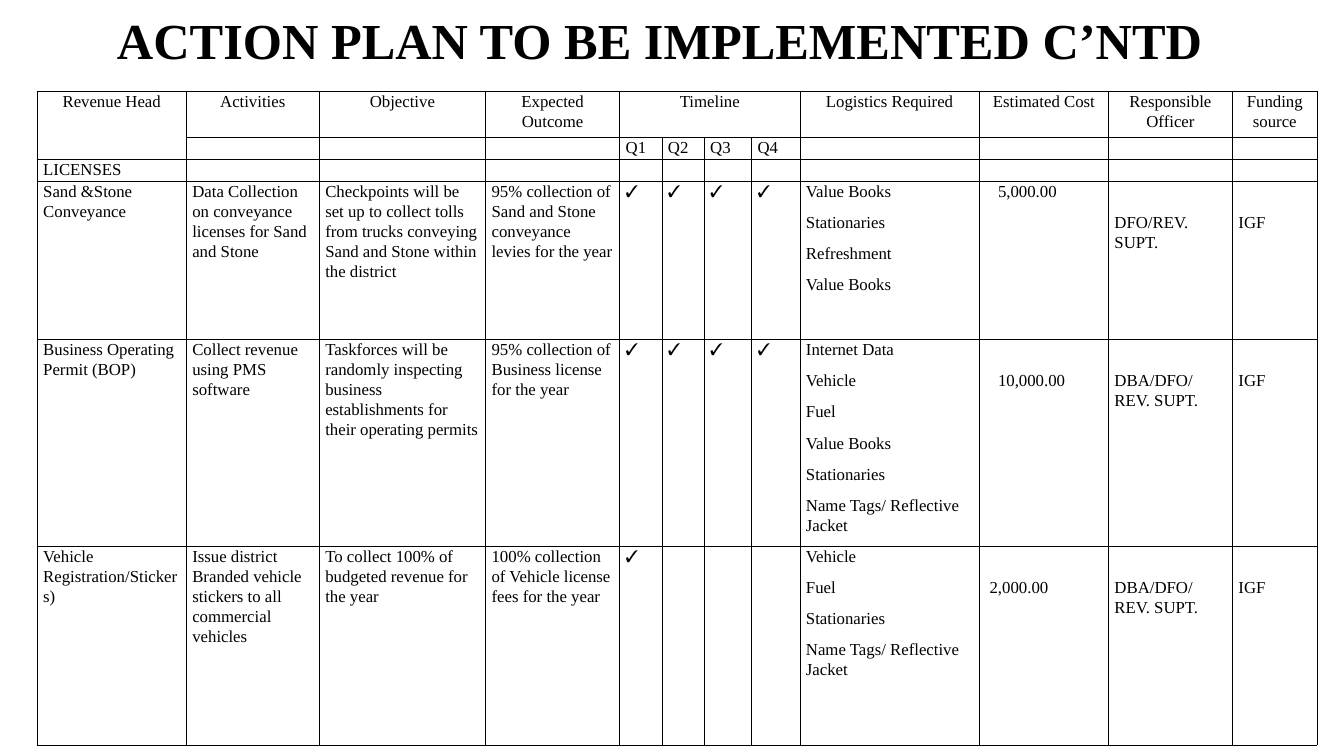
"""Build the revenue action plan slide."""
from lxml.etree import SubElement
from pptx import Presentation
from pptx.dml.color import RGBColor as RGB
from pptx.enum.text import MSO_ANCHOR as ANCHOR, PP_ALIGN as ALIGN
from pptx.oxml.ns import qn
from pptx.util import Pt

COLORS = {"ink": "000000"}
FONT = "Times New Roman"
COL_WIDTHS = [106.5, 95, 118.8, 95.8, 30.2, 30.2, 33.8, 34.6, 128.2, 92.2, 88.6, 60.5]
ROW_HEIGHTS = [32.4, 15.8, 15.8, 113, 139, 142]
QUARTERS, COST, OFFICER, FUNDING = 4, 9, 10, 11
TICK = "✓"
ROWS = [
    ["Revenue Head", "Activities", "Objective", "Expected Outcome", "Timeline", "", "", "",
     "Logistics Required", "Estimated Cost", "Responsible Officer", "Funding source"],
    ["", "", "", "", "Q1", "Q2", "Q3", "Q4", "", "", "", ""],
    ["LICENSES"] + [""] * 11,
    ["Sand &Stone Conveyance",
     "Data Collection on conveyance licenses for Sand and Stone",
     "Checkpoints will be set up to collect tolls from trucks conveying "
     "Sand and Stone within the district",
     "95% collection of Sand and Stone conveyance levies for the year",
     TICK, TICK, TICK, TICK,
     "Value Books\nStationaries\nRefreshment\nValue Books",
     "5,000.00", "DFO/REV. SUPT.", "IGF"],
    ["Business Operating Permit (BOP)",
     "Collect revenue using PMS software",
     "Taskforces will be randomly inspecting business establishments "
     "for their operating permits",
     "95% collection of Business license for the year",
     TICK, TICK, TICK, TICK,
     "Internet Data\nVehicle\nFuel\nValue Books\nStationaries\nName Tags/ Reflective Jacket",
     "10,000.00", "DBA/DFO/REV. SUPT.", "IGF"],
    ["Vehicle Registration/Stickers)",
     "Issue district Branded vehicle stickers to all commercial vehicles",
     "To collect 100% of budgeted revenue for the year",
     "100% collection of Vehicle license fees for the year",
     TICK, "", "", "",
     "Vehicle\nFuel\nStationaries\nName Tags/ Reflective Jacket",
     "2,000.00", "DBA/DFO/REV. SUPT.", "IGF"],
]
FIRST_ITEM = 3
COST_INDENTS = {3: 9, 4: 9, 5: 3}
LOWERED = {(r, c) for r in (3, 4, 5) for c in (COST, OFFICER, FUNDING)} - {(3, COST)}


def style_font(p, size, bold=False):
    p.font.name = FONT
    p.font.size = Pt(size)
    p.font.bold = bold
    p.font.color.rgb = RGB.from_string(COLORS["ink"])


def add_border(cell, side, width):
    ln = SubElement(cell._tc.get_or_add_tcPr(), qn(f"a:ln{side}"), w=str(Pt(width)))
    fill = SubElement(ln, qn("a:solidFill"))
    SubElement(fill, qn("a:srgbClr"), val=COLORS["ink"])


prs = Presentation()
prs.slide_width, prs.slide_height = Pt(960), Pt(540)
s = prs.slides.add_slide(prs.slide_layouts[6])

title = s.shapes.add_textbox(Pt(83.5), Pt(10), Pt(810), Pt(42))
tf = title.text_frame
tf.word_wrap = True
tf.vertical_anchor = ANCHOR.MIDDLE
tf.margin_left = tf.margin_right = tf.margin_top = tf.margin_bottom = 0
tf.text = "ACTION PLAN TO BE IMPLEMENTED C’NTD"
p = tf.paragraphs[0]
p.line_spacing = 0.9
style_font(p, 36, bold=True)

frame = s.shapes.add_table(len(ROWS), len(COL_WIDTHS), Pt(26.6), Pt(65.5),
                           Pt(sum(COL_WIDTHS)), Pt(sum(ROW_HEIGHTS)))
table = frame.table
table.first_row = table.horz_banding = False
for col, width in zip(table.columns, COL_WIDTHS):
    col.width = Pt(width)
for row, height in zip(table.rows, ROW_HEIGHTS):
    row.height = Pt(height)

for r, texts in enumerate(ROWS):
    for c, text in enumerate(texts):
        cell = table.cell(r, c)
        indent = COST_INDENTS.get(r, 0) if c == COST else 0
        cell.margin_left, cell.margin_right = Pt(4.3 + indent), Pt(4.3)
        cell.margin_top = Pt(22 if (r, c) in LOWERED else 0)
        cell.margin_bottom = 0
        cell.text = text
        for p in cell.text_frame.paragraphs:
            p.alignment = ALIGN.CENTER if r == 0 else ALIGN.LEFT
            if text:
                p.line_spacing = 1.07
                p.space_after = Pt(8)
            style_font(p, 12)
            p._p.get_or_add_endParaRPr().set("sz", "1200")
        add_border(cell, "L", 1 if c in (0, OFFICER) else 0.5)
        add_border(cell, "R", 1 if c == COST else 0.5)
        add_border(cell, "T", 0.5)
        add_border(cell, "B", 0.5)
        cell.fill.background()

table.cell(0, 0).merge(table.cell(1, 0))
table.cell(0, QUARTERS).merge(table.cell(0, QUARTERS + 3))

prs.save("out.pptx")
